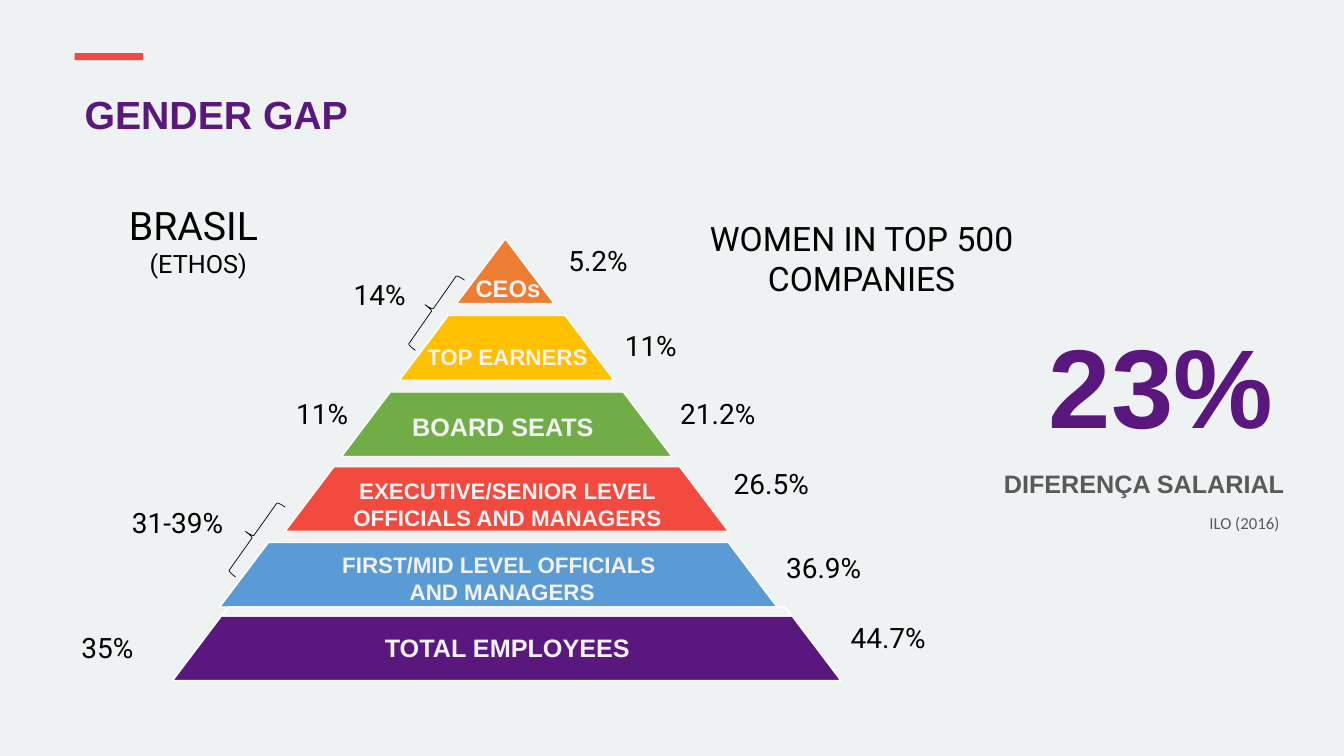
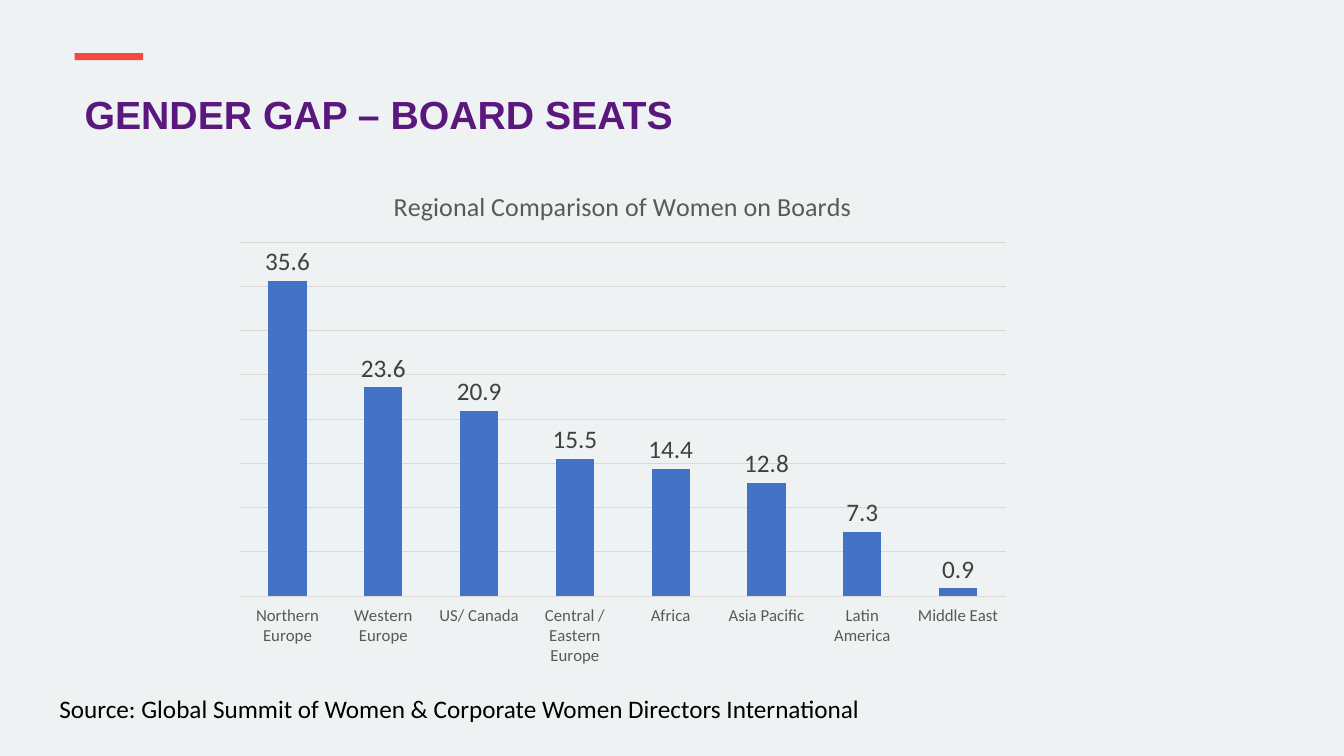
from dataclasses import dataclass
from typing import Optional

from pptx import Presentation
from pptx.chart.data import CategoryChartData as ChartData
from pptx.dml.color import RGBColor as Rgb
from pptx.enum.chart import XL_CHART_TYPE as Kind
from pptx.enum.chart import XL_LABEL_POSITION as Spot
from pptx.enum.chart import XL_TICK_LABEL_POSITION as TickSpot
from pptx.enum.chart import XL_TICK_MARK as Tick
from pptx.enum.shapes import MSO_SHAPE as Form
from pptx.enum.text import MSO_ANCHOR as Anchor
from pptx.enum.text import MSO_AUTO_SIZE as Fit
from pptx.enum.text import PP_ALIGN as Align
from pptx.util import Pt

# Colours
PAPER = Rgb(0xEF, 0xF2, 0xF3)
PURPLE = Rgb(0x5A, 0x17, 0x7E)
RED = Rgb(0xF3, 0x4A, 0x3F)
ORANGE = Rgb(0xED, 0x7D, 0x31)
YELLOW = Rgb(0xFF, 0xC0, 0x00)
GREEN = Rgb(0x70, 0xAD, 0x47)
SKY = Rgb(0x5B, 0x9B, 0xD5)
BLUE = Rgb(0x44, 0x72, 0xC4)
PALE = Rgb(0xF2, 0xF2, 0xF2)
WHITE = Rgb(0xFF, 0xFF, 0xFF)
BLACK = Rgb(0, 0, 0)
DARK = Rgb(0x40, 0x40, 0x40)
GREY = Rgb(0x59, 0x59, 0x59)
RULE = Rgb(0xD9, 0xD9, 0xD9)

# Pyramid measures
MID = 362
TIER = 46.2
SLANT = 0.756


@dataclass
class Box:
    x: float
    y: float
    w: float
    h: float

    def place(self) -> tuple:
        return Pt(self.x), Pt(self.y), Pt(self.w), Pt(self.h)


@dataclass
class Tier:
    top: float
    wide: float
    fill: Rgb
    words: str
    label: Box
    size: float = 16
    align: Align = Align.LEFT
    mid: float = MID


@dataclass
class Gap:
    wide: float
    turn: float = 0
    line: Optional[Rgb] = None


@dataclass
class Share:
    words: str
    x: float
    y: float


TIERS = [
    Tier(170.6, 69.8, ORANGE, "CEOs", Box(332.6, 192.2, 163, 28), 17, mid=361),
    Tier(225.4, 153.4, YELLOW, "TOP EARNERS", Box(298, 241.2, 210, 27)),
    Tier(280, 236.2, GREEN, "BOARD SEATS", Box(287.3, 290.2, 176, 29), 18),
    Tier(333.4, 316.8, RED, "EXECUTIVE/SENIOR LEVEL\nOFFICIALS AND MANAGERS",
         Box(226, 337, 273, 46), align=Align.CENTER),
    Tier(387.4, 398.2, SKY, "FIRST/MID LEVEL OFFICIALS \nAND MANAGERS",
         Box(156.2, 390.2, 405, 46), align=Align.CENTER, mid=356),
    Tier(440, 477.4, PURPLE, "TOTAL EMPLOYEES", Box(267.8, 447.8, 193, 29), 18),
]
GAPS = [Gap(82.8, 180), Gap(165.6, 180), Gap(246.2), Gap(327.6),
        Gap(407.5, line=WHITE)]
SHARES = [
    # Right side
    Share("5.2%", 398.9, 170.6), Share("11%", 439.2, 231.1),
    Share("21.2%", 478.8, 279.4), Share("26.5%", 517, 329.8),
    Share("36.9%", 554.4, 389.5), Share("44.7%", 600.5, 440),
    # Left side
    Share("14%", 245.5, 194.4), Share("11%", 204.5, 280),
    Share("31-39%", 87.1, 357.8), Share("35%", 51.1, 447.1),
]
BRACES = [(Box(302.4, 190.8, 13, 61.2), 35), (Box(174.2, 352.8, 13, 61.2), 35.4)]
BOARDS = {
    "Northern Europe": 35.6, "Western Europe": 23.6, "US/ Canada": 20.9,
    "Central / Eastern Europe": 15.5, "Africa": 14.4, "Asia Pacific": 12.8,
    "Latin America": 7.3, "Middle East": 0.9,
}


def style(font, size: float, color: Rgb, face: str, bold: bool = False) -> None:
    font.size, font.name, font.bold = Pt(size), face, bold
    font.color.rgb = color


def write(frame, words: str, *, sizes: tuple = (20,), color: Rgb = BLACK,
          face: str = "Roboto", bold: bool = False,
          align: Align = Align.LEFT, wrap: bool = True) -> None:
    """Fill a frame, one paragraph a line; the last size repeats."""
    frame.word_wrap = wrap
    frame.auto_size = Fit.NONE
    frame.vertical_anchor = Anchor.TOP
    for i, line in enumerate(words.split("\n")):
        para = frame.paragraphs[0] if i == 0 else frame.add_paragraph()
        para.alignment = align
        run = para.add_run()
        run.text = line
        style(run.font, sizes[min(i, len(sizes) - 1)], color, face, bold)


def text(slide, words: str, box: Box, **form) -> None:
    write(slide.shapes.add_textbox(*box.place()).text_frame, words, **form)


def shape(slide, form: Form, box: Box, fill: Optional[Rgb] = None,
          line: Optional[Rgb] = None, width: float = 1, turn: float = 0):
    item = slide.shapes.add_shape(form, *box.place())
    item.shadow.inherit = False
    item.rotation = turn
    if fill is None:
        item.fill.background()
    else:
        item.fill.solid()
        item.fill.fore_color.rgb = fill
    if line is None:
        item.line.fill.background()
    else:
        item.line.color.rgb = line
        item.line.width = Pt(width)
    return item


def band(slide, mid: float, top: float, wide: float, high: float, fill: Rgb,
         line: Optional[Rgb], turn: float = 0) -> None:
    box = Box(mid - wide / 2, top, wide, high)
    item = shape(slide, Form.TRAPEZOID, box, fill, line, turn=turn)
    item.adjustments[0] = SLANT


def start(deck, title: str):
    """Add a slide with the red bar and the title."""
    slide = deck.slides.add_slide(deck.slide_layouts[5])
    shape(slide, Form.RECTANGLE, Box(53.3, 38, 49, 5), RED)
    head = slide.shapes.title
    head.left, head.top, head.width, head.height = Box(53.3, 61.2, 815, 41).place()
    write(head.text_frame, title, sizes=(28,), color=PURPLE, face="Arial", bold=True)
    return slide


def pyramid(slide) -> None:
    # Bands and the gaps between them
    for tier in TIERS:
        band(slide, tier.mid, tier.top, tier.wide, TIER, tier.fill, WHITE)
    for gap, above, below in zip(GAPS, TIERS, TIERS[1:]):
        top = above.top + TIER
        band(slide, MID, top, gap.wide, below.top - top, PALE, gap.line, gap.turn)
    # Labels, shares and braces
    for tier in TIERS:
        text(slide, tier.words, tier.label, sizes=(tier.size,), color=PALE,
             face="Arial", bold=True, align=tier.align)
    for share in SHARES:
        text(slide, share.words, Box(share.x, share.y, 100, 31.5))
    for box, turn in BRACES:
        shape(slide, Form.LEFT_BRACE, box, line=BLACK, width=0.5, turn=turn)


def gender(deck) -> None:
    slide = start(deck, "GENDER GAP")
    text(slide, "WOMEN IN TOP 500 COMPANIES", Box(495.4, 152, 240, 65.5),
         sizes=(24,), align=Align.CENTER)
    text(slide, "BRASIL \n(ETHOS)", Box(21.6, 140.4, 240, 63.4),
         sizes=(28, 18), align=Align.CENTER)
    pyramid(slide)
    # Pay gap
    text(slide, "23%", Box(649.4, 222.5, 267, 104.4), sizes=(80,), color=PURPLE,
         face="Arial", bold=True, align=Align.RIGHT)
    text(slide, "DIFERENÇA SALARIAL", Box(666, 331.2, 258.5, 29), sizes=(18,),
         color=GREY, face="Arial", bold=True, align=Align.RIGHT)
    text(slide, "ILO (2016)", Box(856.8, 362.9, 68.4, 21.6), sizes=(12,),
         color=GREY, face="Calibri", wrap=False)


def columns(slide, box: Box) -> None:
    data = ChartData()
    data.categories = list(BOARDS)
    data.add_series("Series 1", list(BOARDS.values()))
    chart = slide.shapes.add_chart(Kind.COLUMN_CLUSTERED, *box.place(), data).chart
    style(chart.font, 10, BLACK, "Calibri")
    chart.has_legend = False
    # Title
    chart.has_title = True
    run = chart.chart_title.text_frame.paragraphs[0].add_run()
    run.text = "Regional Comparison of Women on Boards"
    style(run.font, 18.6, GREY, "Calibri")
    # Axes
    cat, val = chart.category_axis, chart.value_axis
    cat.major_tick_mark = Tick.NONE
    cat.tick_label_position = TickSpot.LOW
    cat.format.line.fill.background()
    style(cat.tick_labels.font, 12, GREY, "Calibri")
    val.minimum_scale, val.maximum_scale, val.major_unit = 0, 40, 5
    val.has_major_gridlines = True
    grid = val.major_gridlines.format.line
    grid.color.rgb, grid.width = RULE, Pt(0.75)
    val.visible = False
    # Columns and their values
    plot = chart.plots[0]
    plot.gap_width, plot.vary_by_categories = 150, False
    fill = plot.series[0].format.fill
    fill.solid()
    fill.fore_color.rgb = BLUE
    plot.has_data_labels = True
    tags = plot.data_labels
    tags.show_value, tags.position = True, Spot.OUTSIDE_END
    style(tags.font, 18, DARK, "Calibri")


def boards(deck) -> None:
    slide = start(deck, "GENDER GAP – BOARD SEATS")
    columns(slide, Box(159.8, 120.2, 570.2, 362.9))
    text(slide, "Source: Global Summit of Women & Corporate Women Directors International",
         Box(35.3, 491.8, 592, 29), sizes=(18,), face="Calibri", wrap=False)


def main() -> None:
    deck = Presentation()
    deck.slide_width, deck.slide_height = Pt(960), Pt(540)
    back = deck.slide_master.background.fill
    back.solid()
    back.fore_color.rgb = PAPER
    gender(deck)
    boards(deck)
    deck.save("out.pptx")


if __name__ == "__main__":
    main()
